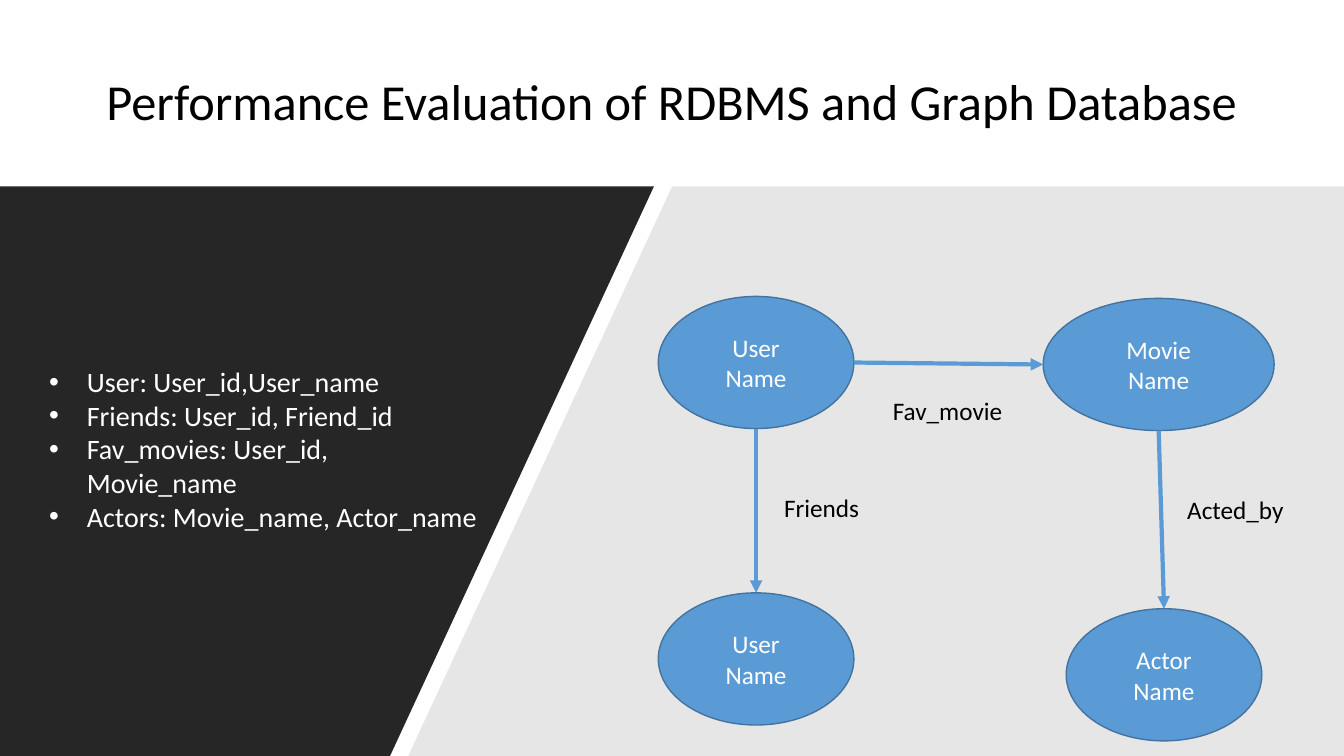
from dataclasses import dataclass

from lxml import etree
from pptx import Presentation
from pptx import util as u
from pptx.dml.color import RGBColor
from pptx.enum import shapes, text
from pptx.oxml import ns

Cm, Pt = u.Cm, u.Pt


@dataclass(frozen=True)
class Theme:
    font: str = "Calibri"
    dark: str = "262626"
    grey: str = "E7E6E6"
    blue: str = "5B9BD5"
    edge: str = "43739E"
    white: str = "FFFFFF"
    black: str = "000000"
    head: int = 36
    body: int = 20
    node: int = 18


T = Theme()
W, H, TOP = 33.87, 19.05, 4.7


def rgb(code):
    return RGBColor.from_string(code)


def add(parent, tag, **attrs):
    node = etree.SubElement(parent, ns.qn(tag))
    for key, val in attrs.items():
        node.set(key, val)
    return node


def write(frame, lines, size, color, align=text.PP_ALIGN.LEFT):
    """Fill a text frame with one paragraph per line."""
    for i, line in enumerate(lines):
        para = frame.paragraphs[0] if i == 0 else frame.add_paragraph()
        para.text = line
        para.alignment = align
        para.font.name = T.font
        para.font.size = Pt(size)
        para.font.color.rgb = rgb(color)


def panel(slide, points, color):
    """Draw a borderless polygon through points in cm."""
    pts = [(Cm(x), Cm(y)) for x, y in points]
    build = slide.shapes.build_freeform(*pts[0], scale=1.0)
    build.add_line_segments(pts[1:], close=True)
    shape = build.convert_to_shape()
    shape.shadow.inherit = False
    shape.fill.solid()
    shape.fill.fore_color.rgb = rgb(color)
    shape.line.fill.background()


def back(slide, x, y, w, h):
    """Split the box into a dark and a grey panel with a slanted gap."""
    low, high, gap = x + 9.83, x + 16.48, 0.46
    end, foot = x + w, y + h
    panel(slide, [(high + gap, y), (end, y), (end, foot), (low + gap, foot)], T.grey)
    panel(slide, [(x, y), (high, y), (low, foot), (x, foot)], T.dark)


def title(slide, x, y, w, h):
    shape = slide.shapes.title
    shape.left, shape.top, shape.width, shape.height = map(Cm, (x, y, w, h))
    frame = shape.text_frame
    frame.auto_size = text.MSO_AUTO_SIZE.NONE
    frame.vertical_anchor = text.MSO_ANCHOR.TOP
    write(frame, ["Performance Evaluation of RDBMS and Graph Database"],
          T.head, T.black, text.PP_ALIGN.CENTER)


def tables(slide, x, y, w, h):
    """List the relational tables as bullets."""
    frame = slide.shapes.add_textbox(*map(Cm, (x, y, w, h))).text_frame
    frame.word_wrap = True
    frame.vertical_anchor = text.MSO_ANCHOR.MIDDLE
    write(frame, ["User: User_id,User_name", "Friends: User_id, Friend_id",
                  "Fav_movies: User_id, Movie_name",
                  "Actors: Movie_name, Actor_name"], T.body, T.white)
    for para in frame.paragraphs:
        props = para._p.get_or_add_pPr()
        props.set("marL", str(Cm(0.95)))
        props.set("indent", str(-Cm(0.95)))
        add(props, "a:buFont", typeface="Arial")
        add(props, "a:buChar", char="•")


def oval(slide, word, x, y, w=4.93, h=3.33):
    shape = slide.shapes.add_shape(shapes.MSO_SHAPE.OVAL, *map(Cm, (x, y, w, h)))
    shape.shadow.inherit = False
    shape.fill.solid()
    shape.fill.fore_color.rgb = rgb(T.blue)
    shape.line.color.rgb = rgb(T.edge)
    shape.line.width = Pt(1)
    shape.text_frame.vertical_anchor = text.MSO_ANCHOR.MIDDLE
    write(shape.text_frame, [word, "Name"], T.node, T.white, text.PP_ALIGN.CENTER)
    return shape


def arrow(slide, start, end):
    line = slide.shapes.add_connector(shapes.MSO_CONNECTOR.STRAIGHT, *start, *end)
    line.line.color.rgb = rgb(T.blue)
    line.line.width = Pt(3)
    add(line.line._get_or_add_ln(), "a:tailEnd", type="triangle")
    add(line._element.spPr, "a:effectLst")


def across(slide, one, two):
    arrow(slide, (one.left + one.width, one.top + one.height // 2),
          (two.left, two.top + two.height // 2))


def down(slide, one, two):
    arrow(slide, (one.left + one.width // 2, one.top + one.height),
          (two.left + two.width // 2, two.top))


def label(slide, word, x, y, w=4.37, h=0.91):
    frame = slide.shapes.add_textbox(*map(Cm, (x, y, w, h))).text_frame
    frame.word_wrap = True
    write(frame, [word], T.node, T.black)


def graph(slide, x, y):
    """Draw the nodes and edges of the graph model from its top left corner."""
    user = oval(slide, "User", x, y)
    friend = oval(slide, "User", x, y + 7.47)
    movie = oval(slide, "Movie", x + 9.7, y + 0.05, w=5.82)
    actor = oval(slide, "Actor", x + 10.28, y + 7.87)
    down(slide, user, friend)
    across(slide, user, movie)
    down(slide, movie, actor)
    label(slide, "Friends", x + 2.92, y + 4.8)
    label(slide, "Fav_movie", x + 5.66, y + 2.36)
    label(slide, "Acted_by", x + 13.08, y + 4.85, w=3.2)


def main():
    deck = Presentation()
    deck.slide_width, deck.slide_height = Cm(W), Cm(H)
    slide = deck.slides.add_slide(deck.slide_layouts.get_by_name("Title Only"))
    back(slide, 0, TOP, W, H - TOP)
    title(slide, 0, 1.65, W, 1.8)
    tables(slide, 0.99, 6.25, 11.43, 10.11)
    graph(slide, 16.59, 7.47)
    deck.save("out.pptx")


if __name__ == "__main__":
    main()
